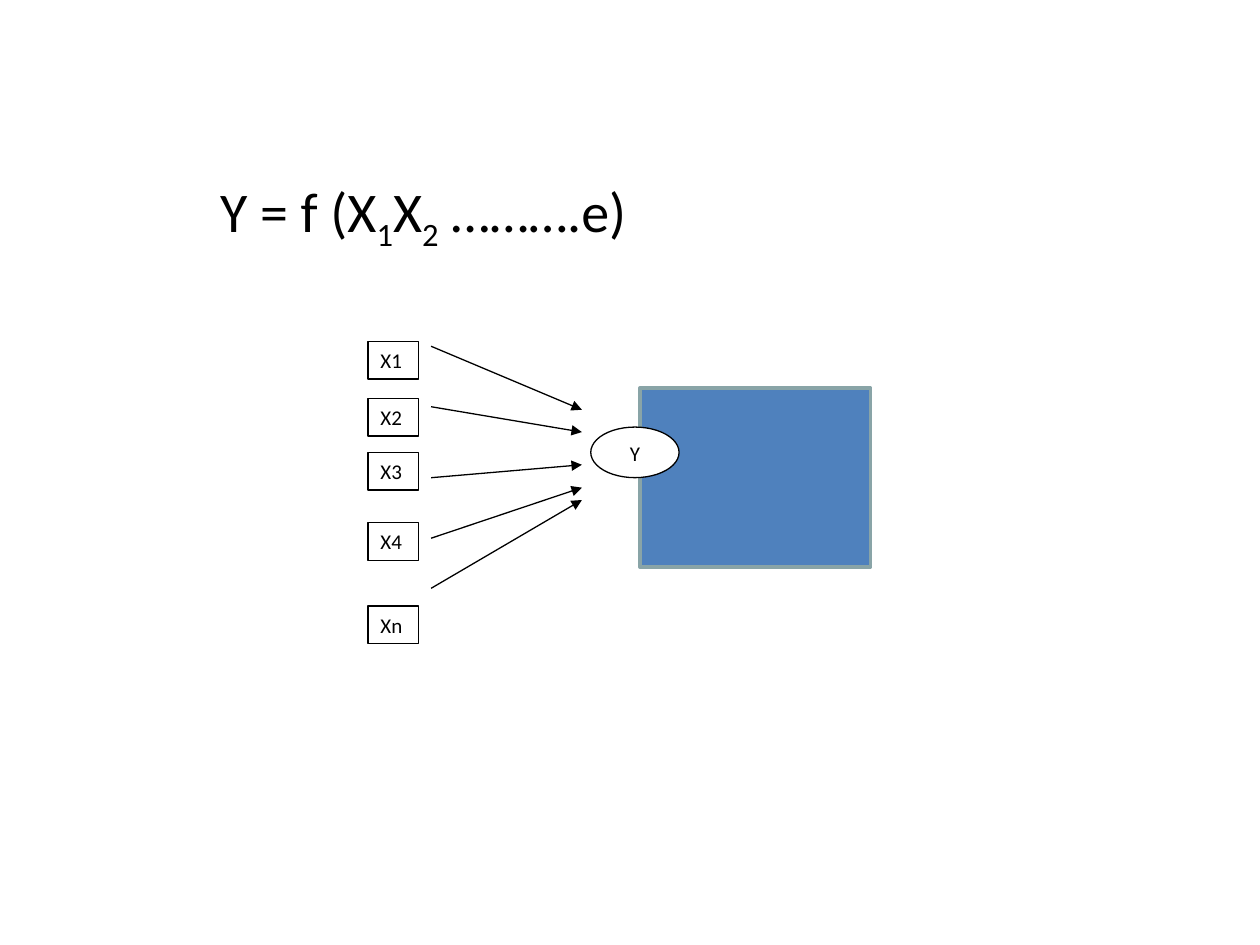
from dataclasses import dataclass

from lxml.etree import SubElement
from pptx import Presentation
from pptx.dml.color import RGBColor
from pptx.enum.shapes import MSO_CONNECTOR, MSO_SHAPE
from pptx.enum.text import MSO_ANCHOR, MSO_AUTO_SIZE, PP_ALIGN
from pptx.oxml.ns import qn
from pptx.util import Cm, Pt


@dataclass(frozen=True)
class Theme:
    font: str = "Calibri"
    ink: str = "000000"
    paper: str = "FFFFFF"
    panel: str = "4F81BD"
    panel_edge: str = "89A4A7"
    formula_size: float = 32
    label_size: float = 12
    thin: float = 0.75
    thick: float = 2
    subscript: str = "-25000"


THEME = Theme()

FORMULA = [("Y = f (X", False), ("1", True), ("X", False), ("2", True), (" ……….e)", False)]
FORMULA_AREA = (4.19, 3.43, 10.9, 1.6)
PANEL_AREA = (12.9, 7.82, 4.65, 3.61)
OUTCOME = "Y"
OUTCOME_AREA = (11.91, 8.61, 1.78, 1.02)

# label, fill, box top, arrow start height, arrow end height
FACTORS = [
    ("X1", THEME.paper, 6.88, 6.98, 8.26),
    ("X2", None, 8.03, 8.2, 8.71),
    ("X3", None, 9.12, 9.63, 9.37),
    ("X4", THEME.paper, 10.54, 10.85, 9.83),
    ("Xn", THEME.paper, 12.22, 11.86, 10.08),
]
FACTOR_LEFT, FACTOR_WIDTH, FACTOR_HEIGHT = 7.42, 1.02, 0.76
ARROW_START, ARROW_END = 8.69, 11.73


def add_run(paragraph, text, size, lowered=False):
    """Append one styled run, lowered when it is a subscript."""
    run = paragraph.add_run()
    run.text = text
    run.font.name = THEME.font
    run.font.size = Pt(size)
    run.font.color.rgb = RGBColor.from_string(THEME.ink)
    if lowered:
        run.font._element.set("baseline", THEME.subscript)


def add_block(slide, preset, area, fill, edge=THEME.ink, width=THEME.thin):
    """Add a flat outlined shape."""
    block = slide.shapes.add_shape(preset, *map(Cm, area))
    block.shadow.inherit = False
    if fill:
        block.fill.solid()
        block.fill.fore_color.rgb = RGBColor.from_string(fill)
    else:
        block.fill.background()
    block.line.color.rgb = RGBColor.from_string(edge)
    block.line.width = Pt(width)
    return block


def add_label(block, text, alignment):
    """Write a short label in a shape."""
    block.text_frame.vertical_anchor = MSO_ANCHOR.TOP
    paragraph = block.text_frame.paragraphs[0]
    paragraph.alignment = alignment
    add_run(paragraph, text, THEME.label_size)


def add_arrow(slide, start_height, end_height):
    """Draw an arrow from a factor towards the outcome."""
    ends = (ARROW_START, start_height, ARROW_END, end_height)
    arrow = slide.shapes.add_connector(MSO_CONNECTOR.STRAIGHT, *map(Cm, ends))
    arrow.line.color.rgb = RGBColor.from_string(THEME.ink)
    arrow.line.width = Pt(THEME.thin)
    SubElement(arrow.line._get_or_add_ln(), qn("a:tailEnd"), type="triangle")
    SubElement(arrow._element.spPr, qn("a:effectLst"))


def main():
    """Build the slide of factors acting on an outcome."""
    deck = Presentation()
    deck.slide_width, deck.slide_height = Cm(25.4), Cm(19.05)
    slide = deck.slides.add_slide(deck.slide_layouts[6])

    add_block(slide, MSO_SHAPE.RECTANGLE, PANEL_AREA, THEME.panel, THEME.panel_edge, THEME.thick)

    formula = slide.shapes.add_textbox(*map(Cm, FORMULA_AREA)).text_frame
    formula.word_wrap = False
    formula.auto_size = MSO_AUTO_SIZE.SHAPE_TO_FIT_TEXT
    for text, lowered in FORMULA:
        add_run(formula.paragraphs[0], text, THEME.formula_size, lowered)

    for label, fill, top, _, _ in FACTORS:
        area = (FACTOR_LEFT, top, FACTOR_WIDTH, FACTOR_HEIGHT)
        add_label(add_block(slide, MSO_SHAPE.RECTANGLE, area, fill), label, PP_ALIGN.LEFT)

    outcome = add_block(slide, MSO_SHAPE.OVAL, OUTCOME_AREA, THEME.paper)
    add_label(outcome, OUTCOME, PP_ALIGN.CENTER)

    for _, _, _, start_height, end_height in FACTORS:
        add_arrow(slide, start_height, end_height)

    deck.save("out.pptx")


if __name__ == "__main__":
    main()
